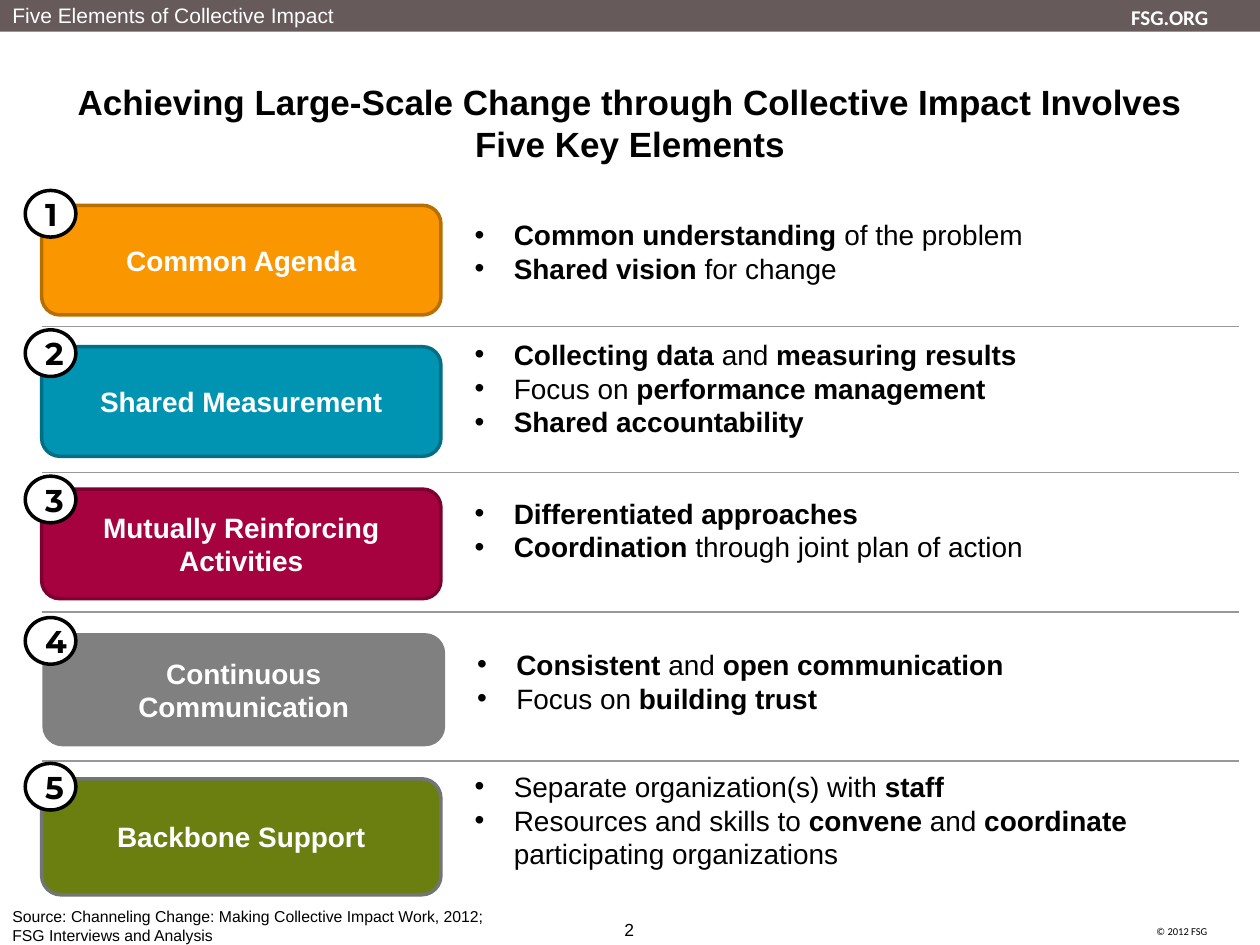
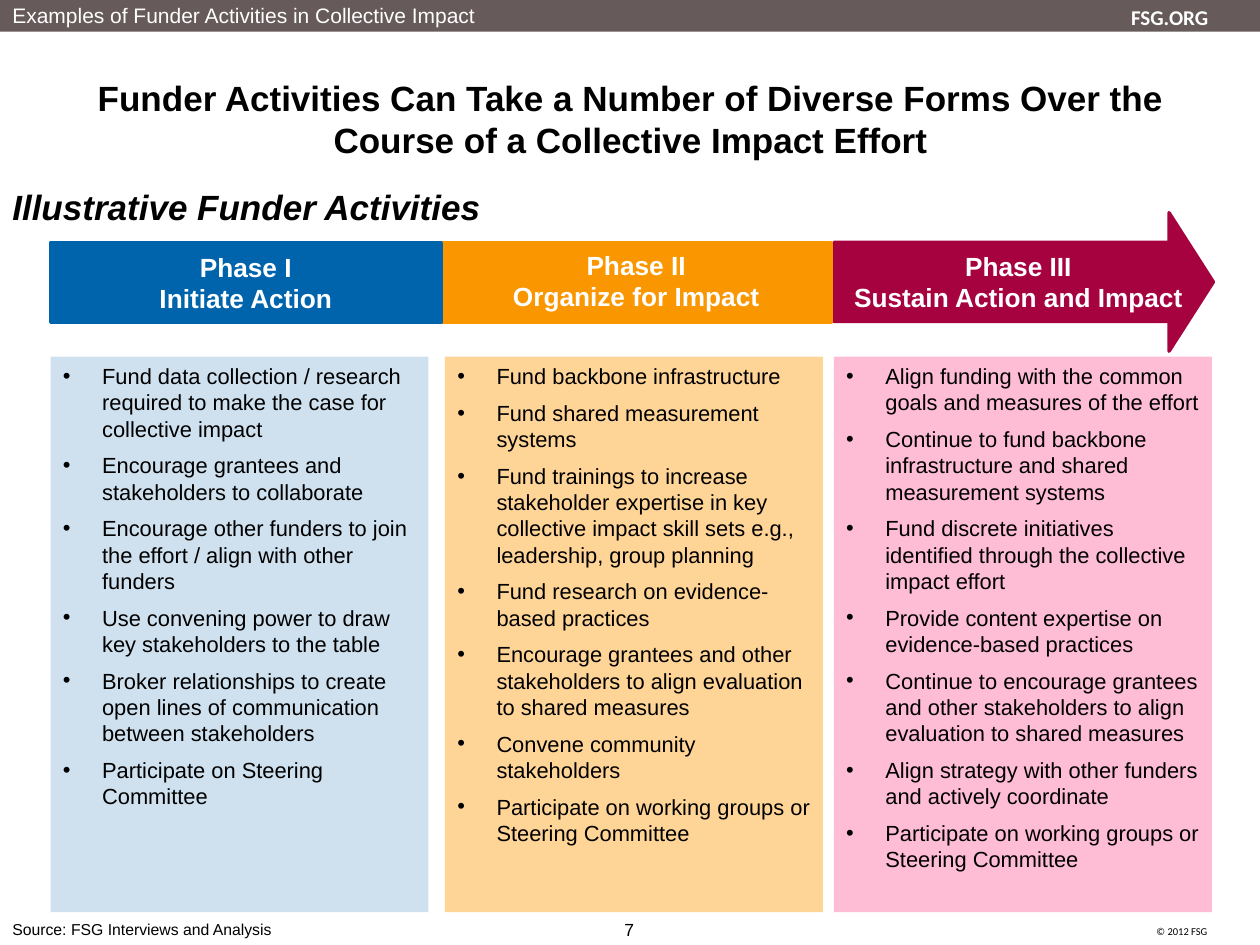
import pptx
import pptx.dml.color
import pptx.enum.shapes
import pptx.enum.text
import pptx.oxml.ns
import pptx.util
from dataclasses import dataclass
from lxml import etree

Cm = pptx.util.Cm
Pt = pptx.util.Pt
SHAPE = pptx.enum.shapes.MSO_SHAPE
ANCHOR = pptx.enum.text.MSO_ANCHOR
ALIGN = pptx.enum.text.PP_ALIGN


@dataclass(frozen=True)
class Theme:
    body_font: str = "Arial"
    brand_font: str = "Calibri"
    badge_font: str = "Montserrat"
    black: str = "000000"
    white: str = "FFFFFF"
    band: str = "665A5A"
    rule: str = "979899"
    blue: str = "0064AD"
    orange: str = "FA9600"
    orange_edge: str = "B96F00"
    orange_tint: str = "FFD597"
    teal: str = "0094B3"
    teal_edge: str = "006F86"
    crimson: str = "A70240"
    crimson_edge: str = "7D0130"
    pink_tint: str = "FEBCD5"
    gray: str = "808080"
    green: str = "6A7F10"
    green_edge: str = "737475"
    title_size: float = 20
    badge_size: float = 18
    element_size: float = 16
    phase_size: float = 15
    activity_size: float = 12.5
    header_size: float = 12
    number_size: float = 10
    source_size: float = 9
    copyright_size: float = 6


def rgb(color):
    return pptx.dml.color.RGBColor.from_string(color)


def add_xml(parent, tag, **attributes):
    return etree.SubElement(parent, pptx.oxml.ns.qn(tag), **attributes)


def set_attributes(target, formats):
    for name, value in formats.items():
        setattr(target, name, value)


class Deck:
    def __init__(self, theme):
        self.theme = theme
        self.presentation = pptx.Presentation()
        self.presentation.slide_width = Cm(25.4)
        self.presentation.slide_height = Cm(19.05)
        self.slide = None

    def start_slide(self, title, title_box, header, number):
        """Add a title-only slide with the shared band, header and footer."""
        theme = self.theme
        layout = self.presentation.slide_layouts[5]
        self.slide = self.presentation.slides.add_slide(layout)
        self.shape(SHAPE.RECTANGLE, (0, 0, 25.4, 0.64), theme.band)
        self.label((23.04, 18.52, 1.55, 0.51), "© 2012 FSG", theme.copyright_size,
                   font=theme.brand_font, align=ALIGN.RIGHT, wrap=False)
        self.label((12.09, 18.39, 1.19, 0.69), str(number), theme.number_size,
                   align=ALIGN.CENTER)
        self.label((22.53, -0.03, 2.08, 0.76), "FSG.ORG", theme.header_size, bold=True,
                   font=theme.brand_font, color=theme.white, align=ALIGN.RIGHT,
                   anchor=ANCHOR.TOP, wrap=False)
        self.label((0, 0, 11.63, 0.61), header, theme.header_size, color=theme.white)

        placeholder = self.slide.shapes.title
        edges = dict(zip(("left", "top", "width", "height"), map(Cm, title_box)))
        set_attributes(placeholder, edges)
        self.fill_text(placeholder, [title], theme.title_size, bold=True,
                       align=ALIGN.CENTER)
        set_attributes(placeholder.text_frame, {"margin_top": 0, "margin_bottom": 0})

    def fill_text(self, shape, lines, size, color=None, font=None, bold=False,
                  italic=False, align=ALIGN.LEFT, anchor=ANCHOR.MIDDLE, wrap=True,
                  bullet=False, gap=0):
        """Fill a shape with paragraphs; text between ** marks is bold."""
        frame = shape.text_frame
        set_attributes(frame, {
            "word_wrap": wrap, "vertical_anchor": anchor,
            "auto_size": pptx.enum.text.MSO_AUTO_SIZE.NONE,
        })
        for index, line in enumerate(lines):
            paragraph = frame.add_paragraph() if index else frame.paragraphs[0]
            if bullet:
                self.add_bullet(paragraph)
            paragraph.alignment = align
            if index and gap:
                paragraph.space_before = Pt(gap)
            for part, text in enumerate(line.split("**")):
                if not text:
                    continue
                run = paragraph.add_run()
                run.text = text
                set_attributes(run.font, {
                    "name": font or self.theme.body_font, "size": Pt(size),
                    "bold": bold or part % 2 == 1, "italic": italic,
                })
                run.font.color.rgb = rgb(color or self.theme.black)

    def add_bullet(self, paragraph):
        properties = paragraph._p.get_or_add_pPr()
        indent = Cm(0.79)
        properties.set("marL", str(indent))
        properties.set("indent", str(-indent))
        add_xml(properties, "a:buFont", typeface=self.theme.body_font)
        add_xml(properties, "a:buChar", char="•")

    def shape(self, kind, box, fill, edge=None, edge_width=2.0, opacity=None):
        shape = self.slide.shapes.add_shape(kind, *map(Cm, box))
        shape.shadow.inherit = False
        shape.fill.solid()
        shape.fill.fore_color.rgb = rgb(fill)
        if opacity is not None:
            color = shape._element.spPr.find(".//" + pptx.oxml.ns.qn("a:srgbClr"))
            add_xml(color, "a:alpha", val=str(opacity * 1000))
        if edge:
            shape.line.color.rgb = rgb(edge)
            shape.line.width = Pt(edge_width)
        else:
            shape.line.fill.background()
        return shape

    def text(self, box, lines, size, **formats):
        text_box = self.slide.shapes.add_textbox(*map(Cm, box))
        self.fill_text(text_box, lines, size, **formats)

    def label(self, box, line, size, **formats):
        self.text(box, [line], size, **formats)

    def horizontal_rule(self, left, right, top):
        connector = self.slide.shapes.add_connector(
            pptx.enum.shapes.MSO_CONNECTOR.STRAIGHT, Cm(left), Cm(top), Cm(right), Cm(top))
        connector.line.color.rgb = rgb(self.theme.rule)
        connector.line.width = Pt(0.75)
        add_xml(connector._element.spPr, "a:effectLst")


def build_elements(deck):
    theme = deck.theme
    deck.start_slide(
        "Achieving Large-Scale Change through Collective Impact Involves Five Key Elements",
        (1.09, 1.55, 23.22, 1.83), "Five Elements of Collective Impact", 2)

    # name, fill, edge, card left, card top, card height, bullets top, bullets
    elements = [
        ("Common Agenda", theme.orange, theme.orange_edge, 0.84, 4.14, 2.21, 4.27,
         ["**Common understanding** of the problem", "**Shared vision** for change"]),
        ("Shared Measurement", theme.teal, theme.teal_edge, 0.84, 6.99, 2.21, 6.68,
         ["**Collecting data** and **measuring results**",
          "Focus on **performance management**", "**Shared accountability**"]),
        ("Mutually Reinforcing Activities", theme.crimson, theme.crimson_edge,
         0.84, 9.86, 2.21, 9.88,
         ["**Differentiated approaches**", "**Coordination** through joint plan of action"]),
        ("Continuous Communication", theme.gray, theme.gray, 0.89, 12.8, 2.21, 12.93,
         ["**Consistent** and **open communication**", "Focus on **building trust**"]),
        ("Backbone Support", theme.green, theme.green_edge, 0.84, 15.7, 2.34, 15.39,
         ["Separate organization(s) with **staff**",
          "Resources and skills to **convene** and **coordinate** "
          "participating organizations"]),
    ]
    for name, fill, edge, left, top, height, bullets_top, bullets in elements:
        card = deck.shape(SHAPE.ROUNDED_RECTANGLE, (left, top, 8.05, height), fill, edge)
        deck.fill_text(card, [name], theme.element_size, bold=True, color=theme.white,
                       align=ALIGN.CENTER)
        bullets_height = 1.63 if len(bullets) == 2 else 2.31
        deck.text((left + 8.48, bullets_top, 16.51, bullets_height), bullets,
                  theme.element_size, anchor=ANCHOR.TOP, bullet=True)

    deck.label((0, 18.16, 10.16, 1.02),
               "Source: Channeling Change: Making Collective Impact Work, 2012; "
               "FSG Interviews and Analysis", theme.source_size, anchor=ANCHOR.TOP)

    for rule_top in (6.58, 9.53, 12.34, 15.34):
        deck.horizontal_rule(0.84, 24.97, rule_top)

    for number, badge_top in enumerate((3.84, 6.65, 9.6, 12.45, 15.39), start=1):
        badge = deck.shape(SHAPE.OVAL, (0.51, badge_top, 1.02, 0.94),
                           theme.white, theme.black)
        deck.fill_text(badge, [str(number)], theme.badge_size, font=theme.badge_font,
                       bold=True, align=ALIGN.CENTER)


def build_funder_activities(deck):
    theme = deck.theme
    deck.start_slide(
        "Funder Activities Can Take a Number of Diverse Forms Over the Course of a "
        "Collective Impact Effort",
        (0.51, 1.47, 24.41, 1.83), "Examples of Funder Activities in Collective Impact", 7)

    heading = {"size": theme.phase_size, "bold": True, "color": theme.white,
               "align": ALIGN.CENTER}
    arrow = deck.shape(SHAPE.RIGHT_ARROW, (16.81, 4.29, 7.65, 2.79),
                       theme.crimson, theme.crimson)
    arrow.adjustments[0] = 0.57
    arrow.adjustments[1] = 0.32
    deck.text((16.81, 4.9, 7.44, 1.55), ["Phase III", "Sustain Action and Impact"], **heading)

    phases = [
        (8.89, theme.orange, 2.25, ANCHOR.TOP, ["Phase II", "Organize for Impact"]),
        (1.02, theme.blue, 2, ANCHOR.MIDDLE, ["Phase I", "Initiate Action"]),
    ]
    for left, color, edge_width, anchor, lines in phases:
        bar = deck.shape(SHAPE.RECTANGLE, (left, 4.9, 7.87, 1.6), color, color, edge_width)
        deck.fill_text(bar, lines, anchor=anchor, **heading)

    # left, fill, opacity, right margin, activities
    panels = [
        (1.02, theme.blue, 19, 0.25, [
            "Fund data collection / research required to make the case for collective impact",
            "Encourage grantees and stakeholders to collaborate",
            "Encourage other funders to join the effort / align with other funders",
            "Use convening power to draw key stakeholders to the table",
            "Broker relationships to create open lines of communication between stakeholders",
            "Participate on Steering Committee",
        ]),
        (8.97, theme.orange_tint, None, 0.25, [
            "Fund backbone infrastructure",
            "Fund shared measurement systems",
            "Fund trainings to increase stakeholder expertise in key collective impact "
            "skill sets e.g., leadership, group planning",
            "Fund research on evidence-based practices",
            "Encourage grantees and other stakeholders to align evaluation to shared measures",
            "Convene community stakeholders",
            "Participate on working groups or Steering Committee",
        ]),
        (16.81, theme.pink_tint, None, 0.13, [
            "Align funding with the common goals and measures of the effort",
            "Continue to fund backbone infrastructure and shared measurement systems",
            "Fund discrete initiatives identified through the collective impact effort",
            "Provide content expertise on evidence-based practices",
            "Continue to encourage grantees and other stakeholders to align evaluation "
            "to shared measures",
            "Align strategy with other funders and actively coordinate",
            "Participate on working groups or Steering Committee",
        ]),
    ]
    for left, fill, opacity, right_margin, activities in panels:
        panel = deck.shape(SHAPE.RECTANGLE, (left, 7.19, 7.62, 11.2), fill, opacity=opacity)
        panel.text_frame.margin_right = Cm(right_margin)
        deck.fill_text(panel, activities, theme.activity_size, anchor=ANCHOR.TOP,
                       bullet=True, gap=6)

    deck.label((0, 18.42, 25.4, 0.64), "Source: FSG Interviews and Analysis",
               theme.source_size, anchor=ANCHOR.TOP)
    deck.label((0, 3.61, 12.78, 1.12), "Illustrative Funder Activities", theme.title_size,
               bold=True, italic=True, anchor=ANCHOR.TOP)


def main():
    deck = Deck(Theme())
    build_elements(deck)
    build_funder_activities(deck)
    deck.presentation.save("out.pptx")


if __name__ == "__main__":
    main()
